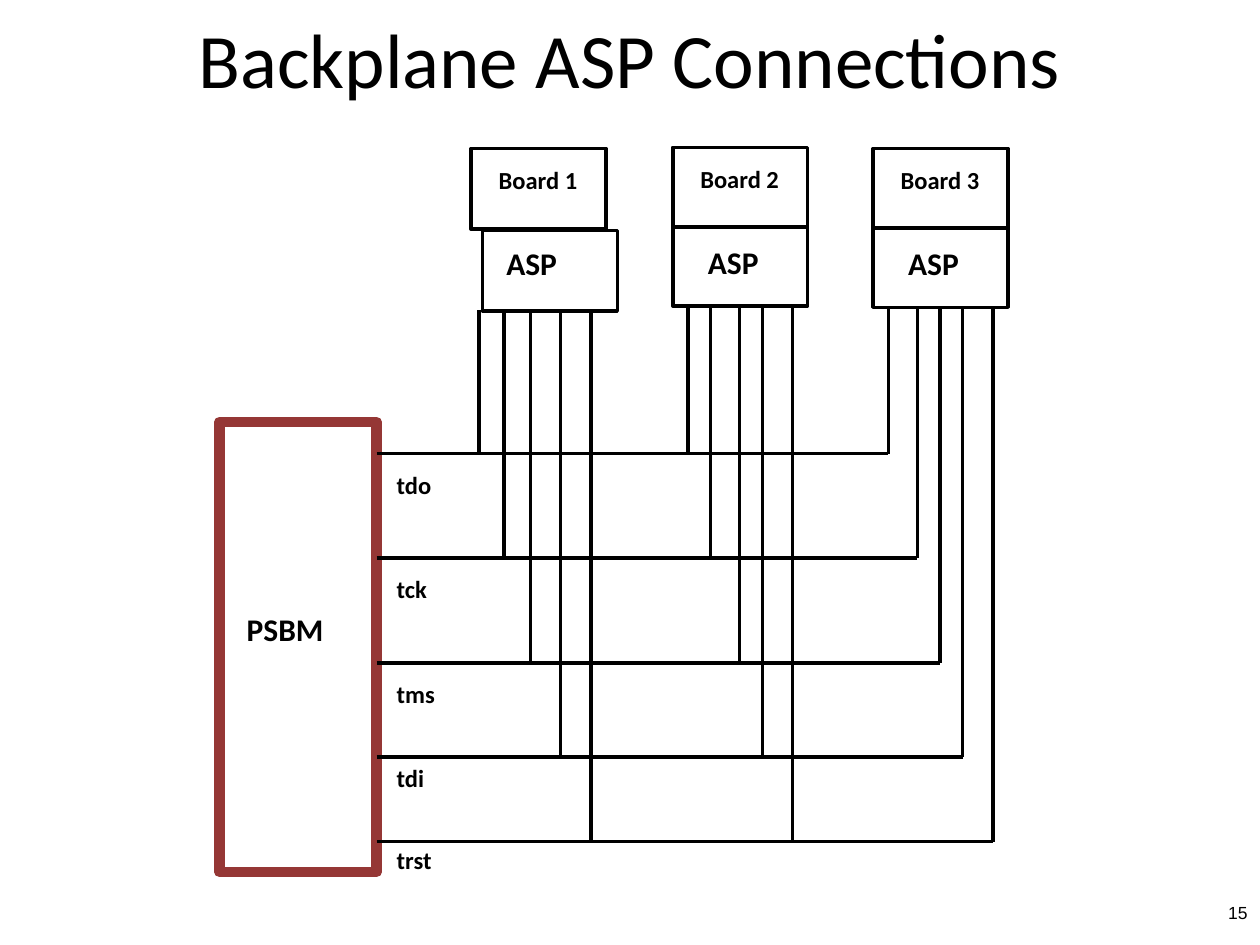
from lxml import etree
from pptx import Presentation
from pptx.dml.color import RGBColor
from pptx.enum.shapes import MSO_CONNECTOR, MSO_SHAPE
from pptx.enum.text import MSO_ANCHOR, PP_ALIGN
from pptx.oxml.ns import qn
from pptx.util import Inches, Pt

RECT = MSO_SHAPE.RECTANGLE
STRAIGHT = MSO_CONNECTOR.STRAIGHT
TOP, MIDDLE = MSO_ANCHOR.TOP, MSO_ANCHOR.MIDDLE
LEFT, CENTER, RIGHT = PP_ALIGN.LEFT, PP_ALIGN.CENTER, PP_ALIGN.RIGHT

BLACK, RED = "000000", "953735"
TITLE = "Backplane ASP Connections"
PAGE_NUMBER = "15"
CONTROLLER = "PSBM"
BUS_LEFT = 2.99
BOARD_WIDTH = 1.07

SIGNALS = [
    ("tdo", 3.6, 3.68),
    ("tck", 4.43, 4.51),
    ("tms", 5.26, 5.34),
    ("tdi", 6.01, 6.01),
    ("trst", 6.68, 6.66),
]
BOARDS = [
    {"name": "Board 3", "left": 6.93, "top": 1.18, "height": 0.63, "asp_shift": (0, 0),
     "wires": [7.05, 7.28, 7.46, 7.64, 7.88]},
    {"name": "Board 2", "left": 5.34, "top": 1.17, "height": 0.63, "asp_shift": (0, 0),
     "wires": [5.46, 5.64, 5.87, 6.05, 6.29]},
    {"name": "Board 1", "left": 3.74, "top": 1.18, "height": 0.64, "asp_shift": (0.09, 0.01),
     "wires": [3.8, 4.0, 4.21, 4.45, 4.69]},
]


def color(value):
    return RGBColor.from_string(value)


def add_text(slide, text, left, top, width, height, size, bold=True,
             font="Calibri", align=LEFT, anchor=TOP):
    box = slide.shapes.add_textbox(Inches(left), Inches(top), Inches(width), Inches(height))
    frame = box.text_frame
    frame.word_wrap = True
    frame.vertical_anchor = anchor
    paragraph = frame.paragraphs[0]
    paragraph.alignment = align
    run = paragraph.add_run()
    run.text = text
    run.font.name = font
    run.font.size = Pt(size)
    run.font.bold = bold
    run.font.color.rgb = color(BLACK)


def add_box(slide, left, top, width, height, line=BLACK, weight=2):
    box = slide.shapes.add_shape(RECT, Inches(left), Inches(top), Inches(width), Inches(height))
    box.shadow.inherit = False
    box.fill.background()
    box.line.color.rgb = color(line)
    box.line.width = Pt(weight)


def add_wire(slide, x1, y1, x2, y2):
    wire = slide.shapes.add_connector(STRAIGHT, Inches(x1), Inches(y1), Inches(x2), Inches(y2))
    wire.line.color.rgb = color(BLACK)
    wire.line.width = Pt(2)
    etree.SubElement(wire._element.spPr, qn("a:effectLst"))


def add_board(slide, name, left, top, height, asp_shift, wires):
    shift_x, shift_y = asp_shift
    add_box(slide, left, top, BOARD_WIDTH, height)
    add_box(slide, left + shift_x, top + height + shift_y, BOARD_WIDTH, height)
    add_text(slide, name, left + 0.12, top + 0.08, BOARD_WIDTH, 0.34, 14)
    add_text(slide, "ASP", left + 0.18, top + 0.71, 0.77, 0.4, 18)
    for x, (_, bus_y, _) in zip(wires, SIGNALS):
        add_wire(slide, x, top + 2 * height, x, bus_y)


def main():
    deck = Presentation()
    deck.slide_width, deck.slide_height = Inches(10), Inches(7.5)
    slide = deck.slides.add_slide(deck.slide_layouts[6])

    add_text(slide, TITLE, 0, 0, 10, 0.91, 44, bold=False, align=CENTER, anchor=MIDDLE)
    add_text(slide, PAGE_NUMBER, 9.5, 6.98, 0.5, 0.52, 10, bold=False,
             font="Arial", align=RIGHT, anchor=MIDDLE)
    add_box(slide, 1.74, 3.35, 1.25, 3.57, RED, 6)
    add_text(slide, CONTROLLER, 1.86, 4.79, 1, 0.4, 18)

    for board in BOARDS:
        add_board(slide, **board)

    for (signal, bus_y, label_top), bus_right in zip(SIGNALS, BOARDS[0]["wires"]):
        add_wire(slide, BUS_LEFT, bus_y, bus_right, bus_y)
        add_text(slide, signal, 3.05, label_top, 0.54, 0.34, 14)

    deck.save("out.pptx")


if __name__ == "__main__":
    main()
